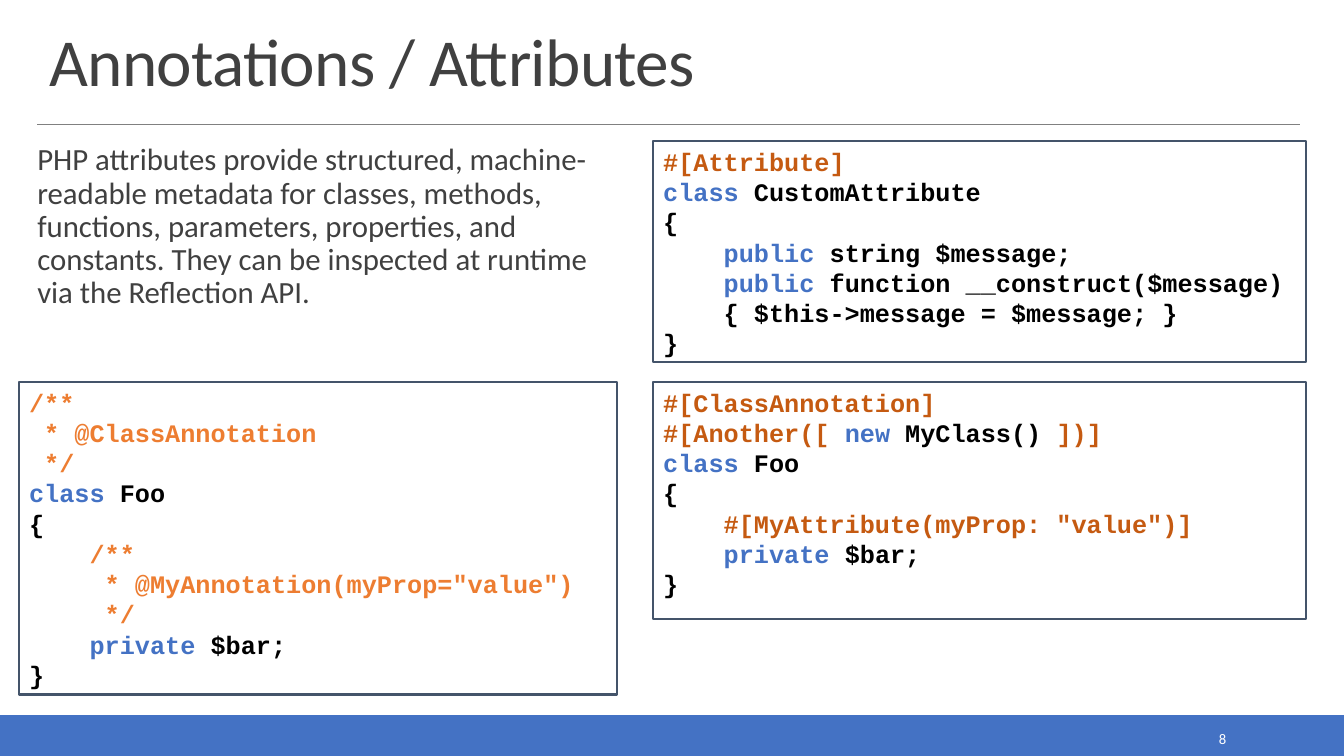
import pptx
import pptx.util
import pptx.dml.color
import pptx.enum.shapes
import pptx.enum.text
import pptx.oxml
from pptx.util import Inches, Pt

TITLE = "Annotations / Attributes"
INTRO = ("PHP attributes provide structured, machine-readable metadata for classes, methods, "
         "functions, parameters, properties, and constants. They can be inspected at runtime "
         "via the Reflection API.")
PAGE = "8"

BLUE, GREY, NAVY = "4472C4", "404040", "44546A"
WHITE, BLACK = "FFFFFF", "000000"
COLORS = {"doc": "ED7D31", "attr": "C55A11", "key": BLUE, "code": BLACK}

DOCBLOCK = [
    [("doc", "/**")],
    [("doc", " * @ClassAnnotation")],
    [("doc", " */")],
    [("key", "class"), ("code", " Foo")],
    [("code", "{")],
    [("doc", "    /**")],
    [("doc", "     * @MyAnnotation(myProp=\"value\")")],
    [("doc", "     */")],
    [("key", "    private"), ("code", " $bar;")],
    [("code", "}")],
]
USAGE = [
    [("attr", "#[ClassAnnotation]")],
    [("attr", "#[Another([ "), ("key", "new "), ("code", "MyClass()"), ("attr", " ])]")],
    [("key", "class"), ("code", " Foo")],
    [("code", "{")],
    [("attr", "    #[MyAttribute(myProp: \"value\")]")],
    [("key", "    private"), ("code", " $bar;")],
    [("code", "}")],
]
DEFINITION = [
    [("attr", "#[Attribute]")],
    [("key", "class "), ("code", "CustomAttribute")],
    [("code", "{")],
    [("key", "    public"), ("code", " string $message;")],
    [("key", "    public"), ("code", " function __construct($message)")],
    [("code", "    { $this->message = $message; }")],
    [("code", "}")],
]
RIGHT, RIGHT_WIDTH, LOWER = 6.48, 6.47, 3.79
PANELS = [
    (DOCBLOCK, (0.19, LOWER, 5.93, 3.1)),
    (USAGE, (RIGHT, LOWER, RIGHT_WIDTH, 2.35)),
    (DEFINITION, (RIGHT, 1.4, RIGHT_WIDTH, 2.19)),
]


def rgb(color):
    return pptx.dml.color.RGBColor.from_string(color)


def inches(values):
    return [Inches(v) for v in values]


def style(font, name, size, color, bold=False):
    font.name, font.size, font.bold = name, Pt(size), bold
    font.color.rgb = rgb(color)


def rectangle(box, line, width, fill=None):
    sp = s.shapes.add_shape(pptx.enum.shapes.MSO_SHAPE.RECTANGLE, *inches(box))
    sp.shadow.inherit = False
    if fill:
        sp.fill.solid()
        sp.fill.fore_color.rgb = rgb(fill)
    else:
        sp.fill.background()
    sp.line.color.rgb = rgb(line)
    sp.line.width = Pt(width)
    return sp


def code_panel(lines, box):
    tf = rectangle(box, NAVY, 1.5).text_frame
    tf.word_wrap = True
    tf.vertical_anchor = pptx.enum.text.MSO_ANCHOR.TOP
    for i, line in enumerate(lines):
        p = tf.add_paragraph() if i else tf.paragraphs[0]
        p.alignment = pptx.enum.text.PP_ALIGN.LEFT
        for kind, text in line:
            r = p.add_run()
            r.text = text
            style(r.font, "Courier New", 18, COLORS[kind], True)


def fill_placeholder(sp, box, text, size, spacing, anchor):
    sp.left, sp.top, sp.width, sp.height = inches(box)
    tf = sp.text_frame
    tf.text = text
    tf.word_wrap = True
    tf.auto_size = pptx.enum.text.MSO_AUTO_SIZE.NONE
    tf.vertical_anchor = anchor
    p = tf.paragraphs[0]
    p.alignment = pptx.enum.text.PP_ALIGN.LEFT
    p.line_spacing = spacing
    p.space_before = Pt(0)
    style(p.runs[0].font, "Calibri", size, GREY)
    return tf


prs = pptx.Presentation()
prs.slide_width, prs.slide_height = inches((13.33, 7.5))
s = prs.slides.add_slide(prs.slide_layouts[1])

rectangle((0, 7.1, 13.33, 0.4), BLUE, 1.25, BLUE)

rule = s.shapes.add_connector(pptx.enum.shapes.MSO_CONNECTOR.STRAIGHT,
                              *inches((0.37, 1.23, 12.89, 1.23)))
rule.line.color.rgb = rgb("808080")
rule.line.width = Pt(0.5)
rule._element.spPr.append(pptx.oxml.parse_xml(
    '<a:effectLst xmlns:a="http://schemas.openxmlformats.org/drawingml/2006/main"/>'))

tf = fill_placeholder(s.shapes.title, (0.39, 0.2, 12.52, 0.84), TITLE, 48, 0.85,
                      pptx.enum.text.MSO_ANCHOR.BOTTOM)
tf.paragraphs[0].runs[0].font._element.set("spc", "-50")

tf = fill_placeholder(s.placeholders[1], (0.37, 1.39, 5.59, 2.05), INTRO, 22, 0.9,
                      pptx.enum.text.MSO_ANCHOR.TOP)
tf.margin_left = tf.margin_right = 0
tf.margin_top = tf.margin_bottom = Inches(0.04)
p = tf.paragraphs[0]
p.space_after = Pt(2)
pPr = p._p.get_or_add_pPr()
pPr.set("marL", "0")
pPr.set("indent", "0")
pPr.append(pptx.oxml.parse_xml(
    '<a:buNone xmlns:a="http://schemas.openxmlformats.org/drawingml/2006/main"/>'))

tf = s.shapes.add_textbox(*inches((10.83, 7.19, 1.43, 0.28))).text_frame
tf.text = PAGE
tf.word_wrap = True
tf.vertical_anchor = pptx.enum.text.MSO_ANCHOR.MIDDLE
tf.paragraphs[0].alignment = pptx.enum.text.PP_ALIGN.RIGHT
style(tf.paragraphs[0].runs[0].font, "Calibri", 10.5, WHITE)

for lines, box in PANELS:
    code_panel(lines, box)

prs.save("out.pptx")
